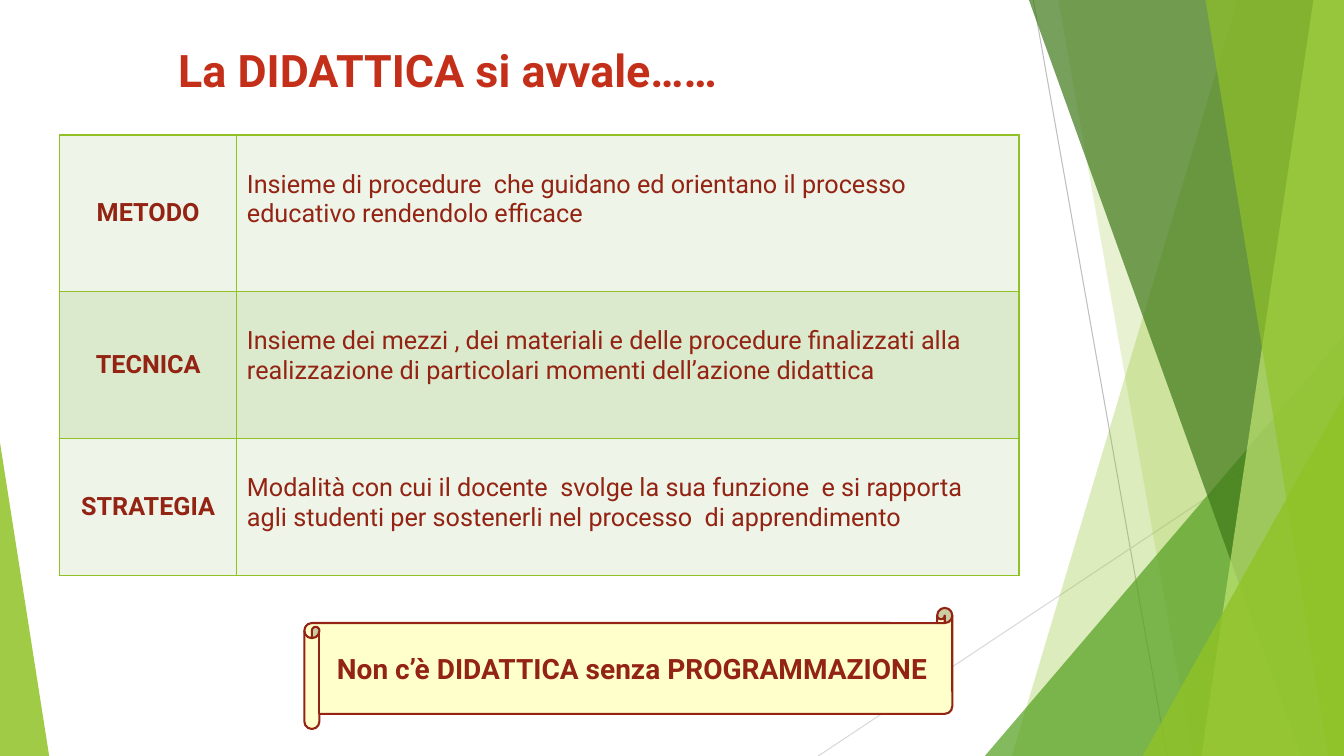
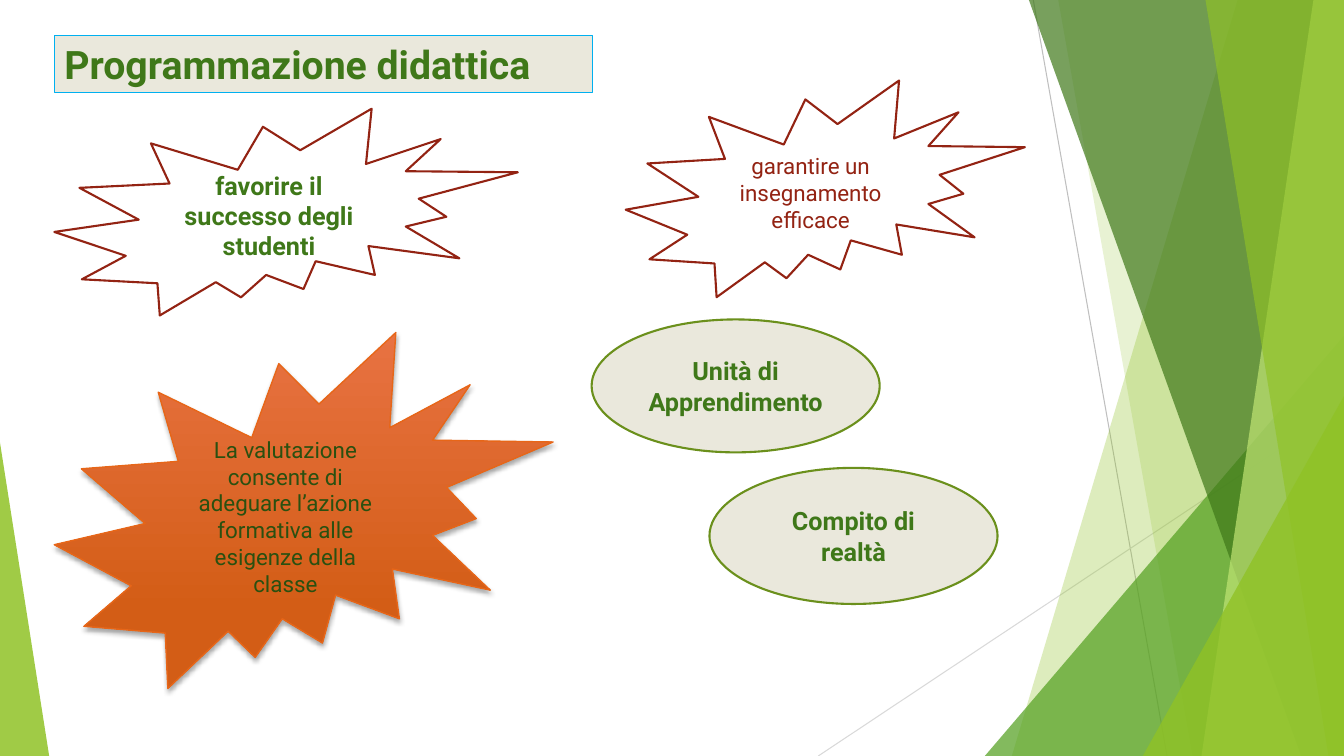
from lxml import etree
from pptx import Presentation
from pptx import util as u
from pptx.dml.color import RGBColor
from pptx.enum import shapes, text
from pptx.oxml.ns import qn

Cm, Pt = u.Cm, u.Pt
MSO = shapes.MSO_SHAPE
MID, TOP = text.MSO_ANCHOR.MIDDLE, text.MSO_ANCHOR.TOP
LEFT, CENTER, JUST = text.PP_ALIGN.LEFT, text.PP_ALIGN.CENTER, text.PP_ALIGN.JUSTIFY

# Shared look
W, H = 33.87, 19.05
FONT = "Roboto"
RED, MAROON, GREEN, LIME = "C42F1A", "932313", "3F7819", "90C226"
SAND, WHITE, OLIVE = "EAE8DC", "FFFFFF", "6B901C"
BANDS = ("EEF4E8", "DBE9CD")

# Backdrop: lines by end points, bands by top and bottom x, wedges by box and apex
RAYS = [(26.04, 0, 29.41, H, "BFBFBF"), (W, 10.24, 20.62, H, "D9D9D9")]
DECOR = [
    ("band", (31.19, 25.5), LIME, 30),
    ("band", (26.67, 30.05), LIME, 20),
    ("wedge", (24.82, 8.46, W, 1), "54A021", 72),
    ("band", (25.93, 32.79), GREEN, 70),
    ("band", (33.1, 30.28), "C0E474", 70),
    ("band", (30.38, 33.48), LIME, 65),
    ("wedge", (28.8, 9.98, W, 1), LIME, 80),
    ("wedge", (0, 11.15, 1.24, 0), LIME, 85),
]

# Slide 1
TERMS = [
    ("METODO", "Insieme di procedure  che guidano ed orientano il processo "
     "educativo rendendolo efficace", 3.94),
    ("TECNICA", "Insieme dei mezzi , dei materiali e delle procedure finalizzati alla "
     "realizzazione di particolari momenti dell’azione didattica", 3.71),
    ("STRATEGIA", "Modalità con cui il docente  svolge la sua funzione  e si rapporta agli "
     "studenti per sostenerli nel processo  di apprendimento", 3.45),
]
COLS = (4.47, 19.71)
SCROLL = (MSO.HORIZONTAL_SCROLL, (7.67, 15.32, 16.33, 3.05),
          "Non c’è DIDATTICA senza PROGRAMMAZIONE", 20, MAROON, True, "FFFFCC", MAROON)

# Slide 2: shape, box, words, size, ink, bold, fill, line
BURST, OVAL = MSO.EXPLOSION2, MSO.FLOWCHART_CONNECTOR
GOALS = [
    (BURST, (15.77, 2.03, 10.06, 5.46), "garantire un insegnamento efficace",
     16, MAROON, False, WHITE, MAROON),
    (BURST, (1.37, 2.74, 11.68, 5.21), "favorire il successo degli studenti",
     18, GREEN, True, WHITE, MAROON),
    (OVAL, (14.91, 8.05, 7.26, 3.35), "Unità di Apprendimento",
     18, GREEN, True, SAND, OLIVE),
    (OVAL, (17.88, 11.79, 7.26, 3.43), "Compito di realtà",
     18, GREEN, True, SAND, OLIVE),
]
REVIEW = (BURST, (1.37, 8.38, 12.57, 8.97),
          "La valutazione consente di adeguare l’azione formativa alle esigenze della classe",
          16, "2A5010", False, "E87242", "E76618")


def rgb(code):
    return RGBColor.from_string(code)


def paint(shape, fill, line=None, width=1.5):
    shape.fill.solid()
    shape.fill.fore_color.rgb = rgb(fill)
    if line:
        shape.line.color.rgb = rgb(line)
        shape.line.width = Pt(width)
    else:
        shape.line.fill.background()


def write(frame, words, size, ink, bold, align=CENTER):
    frame.text = words
    par = frame.paragraphs[0]
    par.alignment = align
    font = par.font
    font.name, font.size, font.bold = FONT, Pt(size), bold
    font.color.rgb = rgb(ink)


def decorate(layout, slide):
    """Draw the backdrop and hand it to the layout, so every slide shows it."""
    parts = []
    for x1, y1, x2, y2, ink in RAYS:
        ray = slide.shapes.add_connector(
            shapes.MSO_CONNECTOR.STRAIGHT, Cm(x1), Cm(y1), Cm(x2), Cm(y2))
        ray.line.color.rgb = rgb(ink)
        ray.line.width = Pt(0.75)
        etree.SubElement(ray.element.spPr, qn("a:effectLst"))
        parts.append(ray)
    for kind, geo, ink, alpha in DECOR:
        if kind == "band":
            top, base = geo
            pen = slide.shapes.build_freeform(Cm(top), 0)
            pen.add_line_segments([(Cm(W), 0), (Cm(W), Cm(H)), (Cm(base), Cm(H))])
            part = pen.convert_to_shape()
        else:
            x, y, right, apex = geo
            part = slide.shapes.add_shape(
                MSO.ISOSCELES_TRIANGLE, Cm(x), Cm(y), Cm(right - x), Cm(H - y))
            part.adjustments[0] = apex
        paint(part, ink)
        part.shadow.inherit = False
        tint = part.element.spPr.find(".//" + qn("a:srgbClr"))
        etree.SubElement(tint, qn("a:alpha"), val=str(alpha * 1000))
        parts.append(part)
    for part in parts:
        layout.shapes.element.append(part.element)


def head(slide, words, box, size, ink, align):
    title = slide.shapes.title
    title.left, title.top, title.width, title.height = map(Cm, box)
    frame = title.text_frame
    frame.auto_size = text.MSO_AUTO_SIZE.NONE
    frame.vertical_anchor = TOP
    write(frame, words, size, ink, True, align)
    return title


def label(slide, kind, box, words, size, ink, bold, fill, line):
    shape = slide.shapes.add_shape(kind, *map(Cm, box))
    shape.shadow.inherit = False
    paint(shape, fill, line)
    shape.text_frame.word_wrap = True
    shape.text_frame.vertical_anchor = MID
    write(shape.text_frame, words, size, ink, bold)
    return shape


def edge(cell):
    props = cell._tc.get_or_add_tcPr()
    for i, side in enumerate(("lnL", "lnR", "lnT", "lnB")):
        line = etree.Element(qn("a:" + side), w=str(Pt(1)))
        fill = etree.SubElement(line, qn("a:solidFill"))
        etree.SubElement(fill, qn("a:srgbClr"), val=LIME)
        props.insert(i, line)


def grid(slide):
    high = sum(row[2] for row in TERMS)
    table = slide.shapes.add_table(
        len(TERMS), 2, Cm(1.5), Cm(3.4), Cm(sum(COLS)), Cm(high)).table
    table.first_row = False
    for col, wide in zip(table.columns, COLS):
        col.width = Cm(wide)
    for r, (term, gloss, tall) in enumerate(TERMS):
        table.rows[r].height = Cm(tall)
        name, note = table.cell(r, 0), table.cell(r, 1)
        write(name.text_frame, term, 18, MAROON, True)
        name.vertical_anchor = MID
        write(note.text_frame, gloss, 18, MAROON, False, LEFT)
        note.margin_top = Cm(0.88)
        for cell in (name, note):
            cell.fill.solid()
            cell.fill.fore_color.rgb = rgb(BANDS[r % 2])
            edge(cell)


def glow(shape):
    """Orange gradient with a soft shadow below."""
    shape.line.width = Pt(1)
    shape.fill.gradient()
    shape.fill.gradient_angle = 270
    for stop, (ink, pos) in zip(shape.fill.gradient_stops,
                                (("E87242", 0), ("D35D16", 0.78))):
        stop.color.rgb = rgb(ink)
        stop.position = pos
    fx = shape.element.spPr.find(qn("a:effectLst"))
    cast = etree.SubElement(fx, qn("a:outerShdw"), blurRad=str(Pt(3)), dist=str(Pt(2)),
                            dir="5400000", rotWithShape="0")
    tint = etree.SubElement(cast, qn("a:srgbClr"), val="000000")
    etree.SubElement(tint, qn("a:alpha"), val="35000")


def main():
    deck = Presentation()
    deck.slide_width, deck.slide_height = Cm(W), Cm(H)
    layout = deck.slide_layouts[5]
    first, second = (deck.slides.add_slide(layout) for _ in range(2))
    decorate(layout, first)

    head(first, "La DIDATTICA si avvale……", (2.79, 0.94, 16.99, 1.63), 32, RED, CENTER)
    grid(first)
    label(first, *SCROLL)

    title = head(second, "Programmazione didattica", (1.37, 0.89, 13.56, 1.45),
                 28, GREEN, JUST)
    paint(title, SAND, "00B0F0", 0.75)
    for goal in GOALS:
        label(second, *goal)
    glow(label(second, *REVIEW))
    deck.save("out.pptx")


if __name__ == "__main__":
    main()
